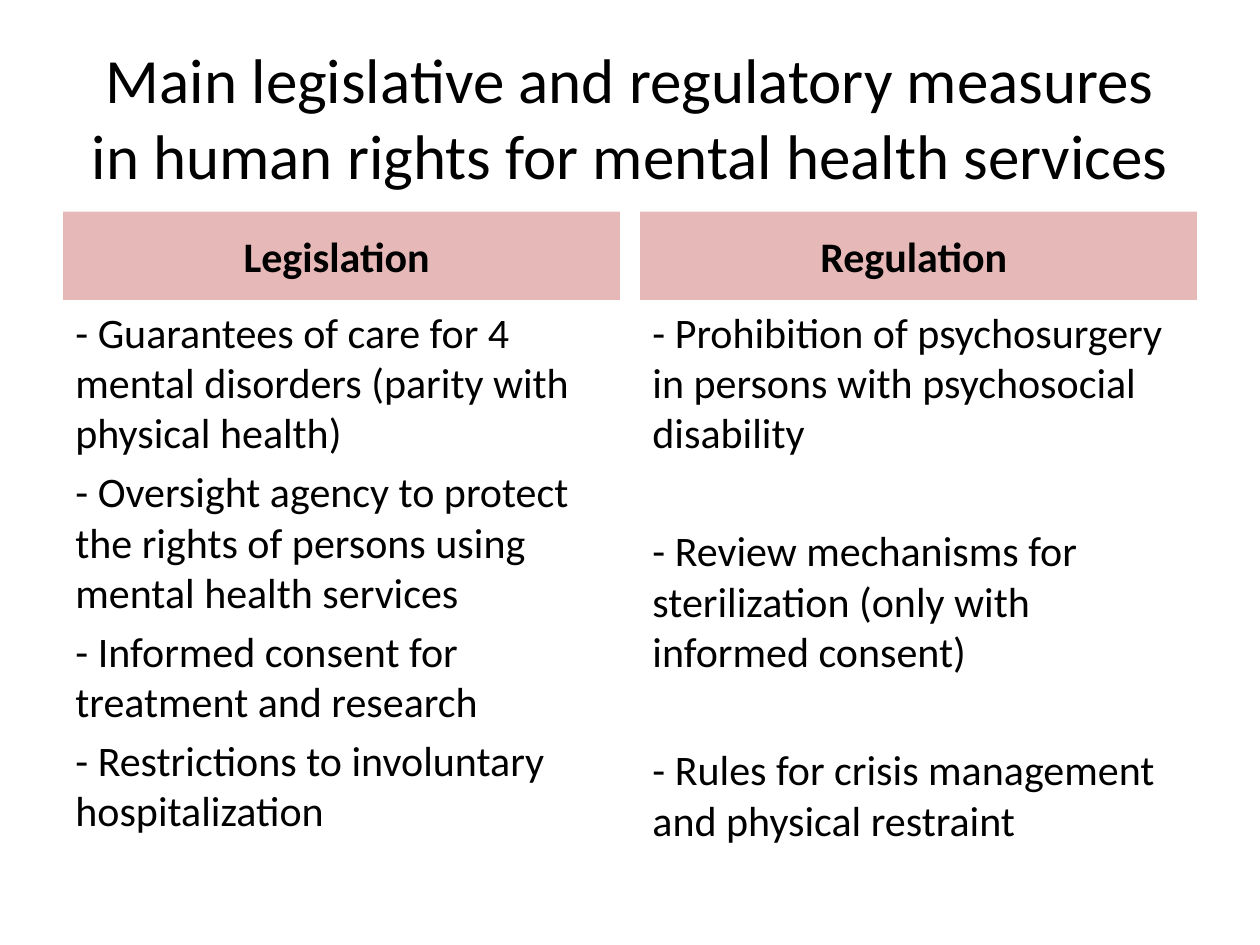
from pptx import Presentation
from pptx.dml.color import RGBColor
from pptx.enum.shapes import MSO_SHAPE
from pptx.enum.text import MSO_ANCHOR, PP_ALIGN
from pptx.util import Inches, Pt

FONT = "Calibri"
BLACK = "000000"
ROSE = "E6B9B8"

MARGIN, GAP = 0.5, 0.16
SLIDE_WIDTH, SLIDE_HEIGHT = 10, 7.5
CONTENT_WIDTH = SLIDE_WIDTH - 2 * MARGIN
COLUMN_WIDTH = (CONTENT_WIDTH - GAP) / 2
COLUMN_TOP, COLUMN_HEIGHT, HEADER_HEIGHT = 1.68, 5.02, 0.7

COLUMNS = [
    ("Legislation ", 4.8, [
        "- Guarantees of care for 4 mental disorders (parity with physical health)",
        "- Oversight agency to protect the rights of persons using mental health services",
        "- Informed consent for treatment and research",
        "- Restrictions to involuntary hospitalization",
    ]),
    ("Regulation ", 38.6, [
        "- Prohibition of psychosurgery in persons with psychosocial disability",
        "- Review mechanisms for sterilization (only with informed consent)",
        "- Rules for crisis management and physical restraint",
    ]),
]


def color(hex_string):
    return RGBColor.from_string(hex_string)


def write(shape, paragraphs, size=24, bold=False, align=PP_ALIGN.LEFT,
          anchor=MSO_ANCHOR.TOP, gap=0):
    """Fill the shape with paragraphs, set apart by gap points."""
    frame = shape.text_frame
    frame.word_wrap = True
    frame.vertical_anchor = anchor
    for index, text in enumerate(paragraphs):
        paragraph = frame.add_paragraph() if index else frame.paragraphs[0]
        paragraph.alignment = align
        paragraph.space_before = Pt(gap if index else 0)
        run = paragraph.add_run()
        run.text = text
        run.font.name = FONT
        run.font.size = Pt(size)
        run.font.bold = bold
        run.font.color.rgb = color(BLACK)


def add_title(slide, text, left, top, width, height):
    title = slide.shapes.title
    title.left, title.top = Inches(left), Inches(top)
    title.width, title.height = Inches(width), Inches(height)
    write(title, [text], size=36, align=PP_ALIGN.CENTER, anchor=MSO_ANCHOR.MIDDLE)


def add_column(slide, heading, measures, gap, left, top, width, height):
    """Place a shaded heading with its list of measures below."""
    header = slide.shapes.add_shape(
        MSO_SHAPE.RECTANGLE, Inches(left), Inches(top), Inches(width), Inches(HEADER_HEIGHT))
    header.shadow.inherit = False
    header.fill.solid()
    header.fill.fore_color.rgb = color(ROSE)
    header.line.fill.background()
    write(header, [heading], bold=True, align=PP_ALIGN.CENTER, anchor=MSO_ANCHOR.MIDDLE)

    body = slide.shapes.add_textbox(
        Inches(left), Inches(top + HEADER_HEIGHT),
        Inches(width), Inches(height - HEADER_HEIGHT))
    write(body, measures, gap=gap)


def main():
    presentation = Presentation()
    presentation.slide_width = Inches(SLIDE_WIDTH)
    presentation.slide_height = Inches(SLIDE_HEIGHT)
    slide = presentation.slides.add_slide(presentation.slide_layouts.get_by_name("Title Only"))
    add_title(
        slide,
        "Main legislative and regulatory measures in human rights for mental health services",
        MARGIN, 0.3, CONTENT_WIDTH, 1.25)
    for index, (heading, gap, measures) in enumerate(COLUMNS):
        left = MARGIN + index * (COLUMN_WIDTH + GAP)
        add_column(slide, heading, measures, gap,
                   left, COLUMN_TOP, COLUMN_WIDTH, COLUMN_HEIGHT)
    presentation.save("out.pptx")


if __name__ == "__main__":
    main()
